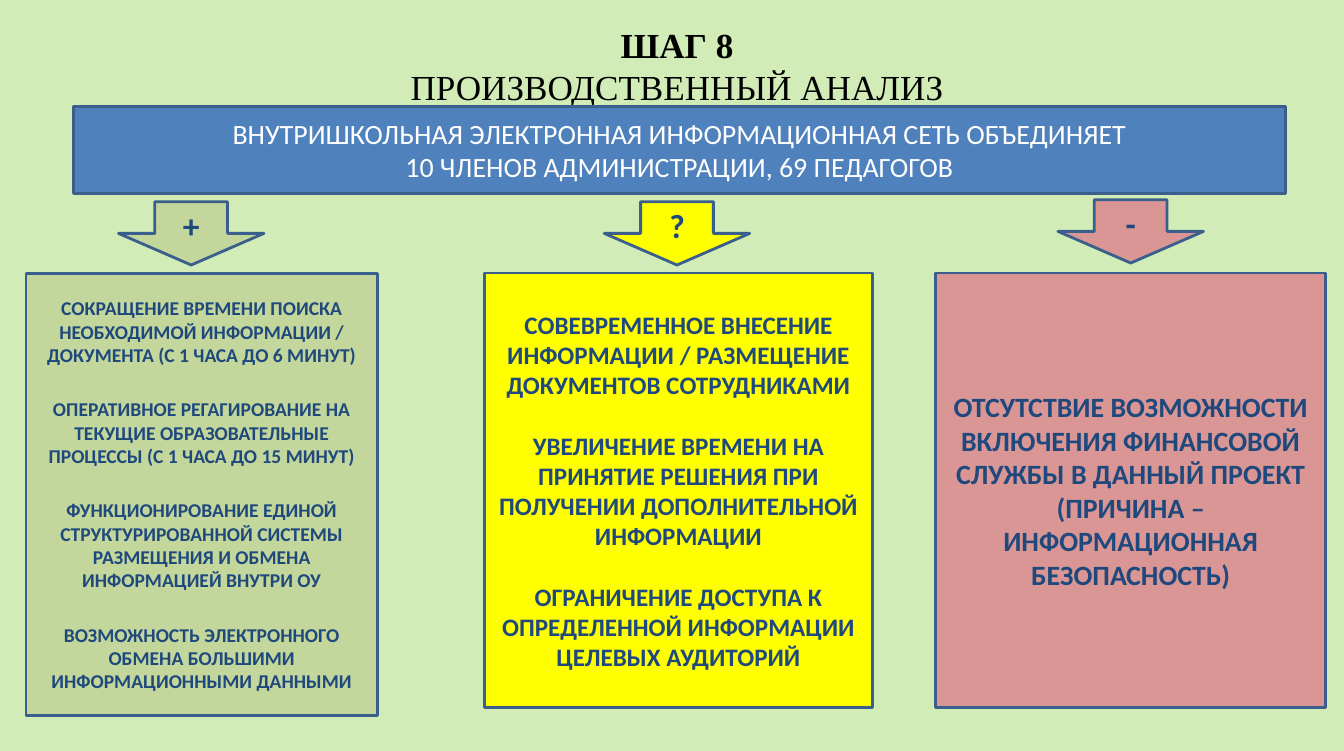
"""Builds the slide on the production analysis step of the school network project."""
from pptx import Presentation
from pptx.dml.color import RGBColor
from pptx.enum import shapes, text
from pptx.util import Inches, Pt

NAVY, OUTLINE = "1F497D", "3A5F8C"
RECT, ARROW = shapes.MSO_SHAPE.RECTANGLE, shapes.MSO_SHAPE.DOWN_ARROW


def paint(color_format, hex_color):
    color_format.rgb = RGBColor.from_string(hex_color)


def add_block(kind, place, fill, lines, size, color=NAVY, bold=True, gap=0):
    block = slide.shapes.add_shape(kind, *map(Inches, place))
    block.shadow.inherit = False
    block.fill.solid()
    paint(block.fill.fore_color, fill)
    paint(block.line.color, OUTLINE)
    block.line.width = Pt(2)
    frame = block.text_frame
    frame.word_wrap = True
    frame.vertical_anchor = text.MSO_ANCHOR.MIDDLE
    frame.text = "\n".join(lines)
    for index, paragraph in enumerate(frame.paragraphs):
        paragraph.alignment = text.PP_ALIGN.CENTER
        paragraph.space_before = Pt(gap if index else 0)
        font = paragraph.runs[0].font
        font.name, font.size, font.bold = "Calibri", Pt(size), bold
        paint(font.color, color)
    return block


deck = Presentation()
deck.slide_width, deck.slide_height = Inches(13.39), Inches(7.48)
slide = deck.slides.add_slide(deck.slide_layouts[6])
slide.background.fill.solid()
paint(slide.background.fill.fore_color, "D2ECB7")

heading = slide.shapes.add_textbox(Inches(0.72), Inches(0.23), Inches(12.05), Inches(0.84)).text_frame
heading.word_wrap = True
heading.vertical_anchor = text.MSO_ANCHOR.MIDDLE
heading.text = "ШАГ 8\nПРОИЗВОДСТВЕННЫЙ АНАЛИЗ"
for index, paragraph in enumerate(heading.paragraphs):
    paragraph.alignment = text.PP_ALIGN.CENTER
    font = paragraph.runs[0].font
    font.name, font.size, font.bold = "Times New Roman", Pt(25.2), index == 0
    paint(font.color, "000000")

add_block(RECT, (0.73, 1.06, 12.08, 0.87), "4F81BD", [
    "ВНУТРИШКОЛЬНАЯ ЭЛЕКТРОННАЯ ИНФОРМАЦИОННАЯ СЕТЬ ОБЪЕДИНЯЕТ",
    "10 ЧЛЕНОВ АДМИНИСТРАЦИИ, 69 ПЕДАГОГОВ",
], 20, "FFFFFF", False)

benefits = [
    "СОКРАЩЕНИЕ ВРЕМЕНИ ПОИСКА НЕОБХОДИМОЙ ИНФОРМАЦИИ / ДОКУМЕНТА (С 1 ЧАСА ДО 6 МИНУТ)",
    "ОПЕРАТИВНОЕ РЕГАГИРОВАНИЕ НА ТЕКУЩИЕ ОБРАЗОВАТЕЛЬНЫЕ ПРОЦЕССЫ (С 1 ЧАСА ДО 15 МИНУТ)",
    "ФУНКЦИОНИРОВАНИЕ ЕДИНОЙ СТРУКТУРИРОВАННОЙ СИСТЕМЫ РАЗМЕЩЕНИЯ И ОБМЕНА ИНФОРМАЦИЕЙ ВНУТРИ ОУ",
    "ВОЗМОЖНОСТЬ ЭЛЕКТРОННОГО ОБМЕНА БОЛЬШИМИ ИНФОРМАЦИОННЫМИ ДАННЫМИ",
]
questions = [
    "СОВЕВРЕМЕННОЕ ВНЕСЕНИЕ ИНФОРМАЦИИ / РАЗМЕЩЕНИЕ ДОКУМЕНТОВ СОТРУДНИКАМИ",
    "УВЕЛИЧЕНИЕ ВРЕМЕНИ НА ПРИНЯТИЕ РЕШЕНИЯ ПРИ ПОЛУЧЕНИИ ДОПОЛНИТЕЛЬНОЙ ИНФОРМАЦИИ",
    "ОГРАНИЧЕНИЕ ДОСТУПА К ОПРЕДЕЛЕННОЙ ИНФОРМАЦИИ ЦЕЛЕВЫХ АУДИТОРИЙ",
]
drawbacks = [
    "ОТСУТСТВИЕ ВОЗМОЖНОСТИ ВКЛЮЧЕНИЯ ФИНАНСОВОЙ СЛУЖБЫ В ДАННЫЙ ПРОЕКТ "
    "(ПРИЧИНА – ИНФОРМАЦИОННАЯ БЕЗОПАСНОСТЬ)",
]
columns = [
    ("+", "C3D69B", (1.18, 2.01), (0.26, 3.5, 4.41), benefits, 14, 0.13),
    ("?", "FFFF00", (6.02, 2.01), (4.83, 3.86, 4.33), questions, 18, 0.1),
    ("-", "D99694", (10.54, 1.99), (9.32, 3.89, 4.33), drawbacks, 20, 0.1),
]
for sign, fill, arrow_corner, (left, width, height), points, size, inset in columns:
    add_block(ARROW, (*arrow_corner, 1.45, 0.63), fill, [sign], 24)
    panel = add_block(RECT, (left, 2.72, width, height), fill, points, size, gap=22)
    panel.text_frame.margin_left = panel.text_frame.margin_right = Inches(inset)

deck.save("out.pptx")
